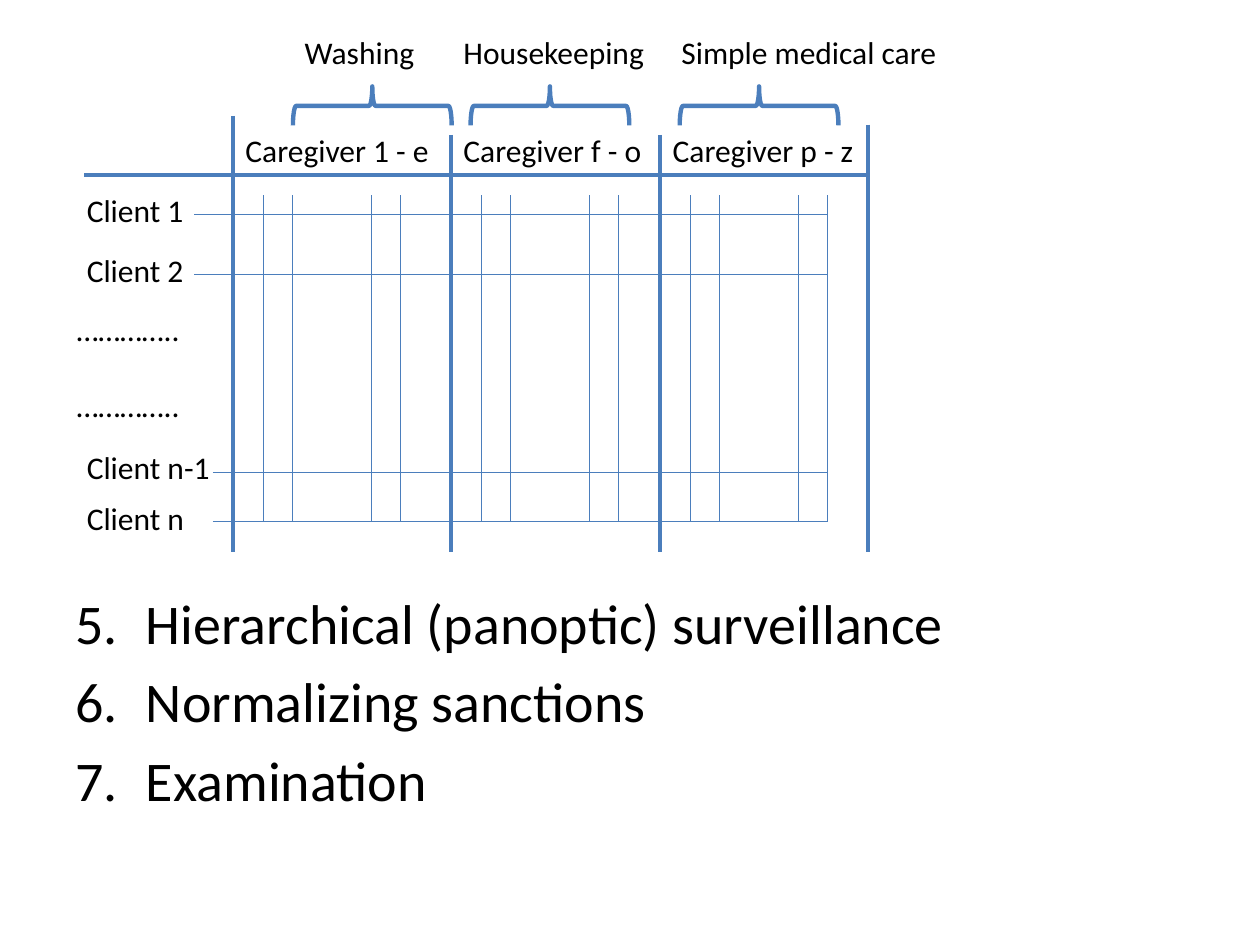
from lxml.etree import SubElement
from pptx import Presentation
from pptx.dml.color import RGBColor
from pptx.enum.shapes import MSO_CONNECTOR as Connector, MSO_SHAPE as Shape
from pptx.oxml.ns import qn
from pptx.util import Inches, Pt

BLUE = RGBColor(0x4B, 0x7E, 0xBC)
BLACK = RGBColor(0, 0, 0)
FONT = "Calibri"
THICK, THIN = 2.5, 0.75
GRID_TOP, GRID_BOTTOM, GRID_RIGHT = 1.55, 4.14, 6.57
TABLE_LEFT, TABLE_RIGHT, TABLE_BOTTOM = 0.67, 6.89, 4.38
HEADER_Y = 1.39
COLUMN_OFFSETS = (0.24, 0.47, 1.1, 1.33)

# left, rule top, caregiver, width, brace left, task, task left, task width
SECTIONS = [
    (1.85, 0.92, "Caregiver 1 - e", 1.73, 2.8, "Washing", 2.32, 1.18),
    (3.58, 1.07, "Caregiver f - o", 1.65, 4.21, "Housekeeping", 3.58, 1.65),
    (5.24, 1.07, "Caregiver p - z", 1.65, 5.87, "Simple medical care", 5.31, 2.36),
]
CLIENTS = [
    ("Client 1", 1.47, 1.54, 1.7),
    ("Client 2", 1.94, 1.54, 2.18),
    ("Client n-1", 3.51, 1.69, 3.75),
    ("Client n", 3.91, 1.69, 4.14),
]
TOPICS = ["Hierarchical (panoptic) surveillance", "Normalizing sanctions", "Examination"]


def add_line(slide, x1, y1, x2, y2, width):
    line = slide.shapes.add_connector(
        Connector.STRAIGHT, Inches(x1), Inches(y1), Inches(x2), Inches(y2))
    line.line.color.rgb = BLUE
    line.line.width = Pt(width)
    SubElement(line._element.spPr, qn("a:effectLst"))


def add_text(slide, left, top, width, height, lines, size=18, gap=0):
    tf = slide.shapes.add_textbox(
        Inches(left), Inches(top), Inches(width), Inches(height)).text_frame
    tf.word_wrap = True
    for i, text in enumerate(lines):
        p = tf.add_paragraph() if i else tf.paragraphs[0]
        p.space_before = Pt(gap)
        r = p.add_run()
        r.text = text
        r.font.name = FONT
        r.font.size = Pt(size)
        r.font.color.rgb = BLACK
    return tf


def add_label(slide, left, top, width, text):
    add_text(slide, left, top, width, 0.4, [text])


def add_brace(slide, left):
    sp = slide.shapes.add_shape(
        Shape.RIGHT_BRACE, Inches(left), Inches(0.21), Inches(0.31), Inches(1.26))
    sp.rotation = 270
    sp.shadow.inherit = False
    sp.fill.background()
    sp.line.color.rgb = BLUE
    sp.line.width = Pt(THICK)


def add_numbered_list(slide, items, start):
    tf = add_text(slide, 0.5, 4.62, 9, 2.08, items, size=32, gap=6.4)
    for p in tf.paragraphs:
        pPr = p._p.get_or_add_pPr()
        pPr.set("marL", str(Inches(0.56)))
        pPr.set("indent", str(Inches(-0.56)))
        SubElement(pPr, qn("a:buFont"), typeface="+mj-lt")
        SubElement(pPr, qn("a:buAutoNum"), type="arabicPeriod", startAt=str(start))


def add_section(slide, left, rule_top, caregiver, width, brace, task, task_left, task_width):
    add_line(slide, left, rule_top, left, TABLE_BOTTOM, THICK)
    add_label(slide, left, 0.99, width, caregiver)
    add_brace(slide, brace)
    add_label(slide, task_left, 0.21, task_width, task)
    for offset in COLUMN_OFFSETS:
        add_line(slide, left + offset, GRID_TOP, left + offset, GRID_BOTTOM, THIN)


def main():
    prs = Presentation()
    prs.slide_width, prs.slide_height = Inches(10), Inches(7.5)
    slide = prs.slides.add_slide(prs.slide_layouts[6])
    add_numbered_list(slide, TOPICS, 5)
    add_line(slide, TABLE_RIGHT, HEADER_Y, TABLE_LEFT, HEADER_Y, THICK)
    for section in SECTIONS:
        add_section(slide, *section)
    add_line(slide, TABLE_RIGHT, 0.99, TABLE_RIGHT, TABLE_BOTTOM, THICK)
    for name, top, line_left, line_y in CLIENTS:
        add_label(slide, 0.59, top, 1.18, name)
        add_line(slide, line_left, line_y, GRID_RIGHT, line_y, THIN)
    dots = add_text(slide, 0.51, 2.41, 1.18, 1.01, ["…………..", "………….."])
    dots.paragraphs[1].space_before = Pt(22)
    prs.save("out.pptx")


if __name__ == "__main__":
    main()
